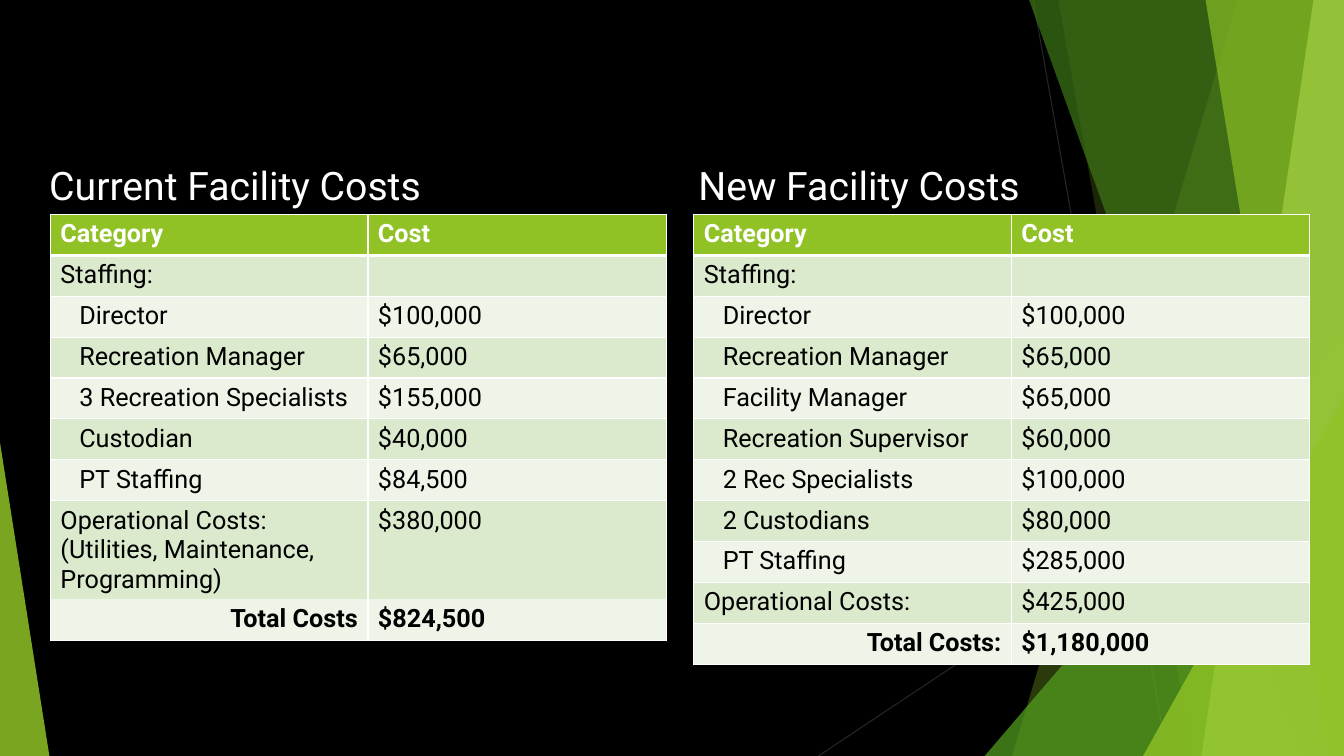
from lxml.etree import SubElement
from pptx import Presentation
from pptx.dml.color import RGBColor
from pptx.enum.shapes import MSO_CONNECTOR, MSO_SHAPE
from pptx.enum.text import PP_ALIGN
from pptx.oxml.ns import qn
from pptx.util import Pt

COLORS = {
    "black": "000000", "white": "FFFFFF", "hairline": "262626",
    "lime": "90C226", "green": "54A021", "forest": "3F7819", "pale": "C0E474",
    "odd_row": "DBE9CD", "even_row": "EEF4E8",
}
WIDTH, HEIGHT = 960, 540
ROW_HEIGHT, TALL_ROW_HEIGHT = 29.2, 70
COLUMN_WIDTHS = (226.8, 213.2)
CELL_MARGIN, STAFF_INDENT = 7.2, 13.5


def color(name):
    return RGBColor.from_string(COLORS[name])


class CostSlide:
    """Draws facets, headings and cost tables on one slide in a shared style."""

    def __init__(self, slide, font_name="Roboto"):
        self.slide = slide
        self.shapes = slide.shapes
        self.font_name = font_name
        slide.background.fill.solid()
        slide.background.fill.fore_color.rgb = color("black")

    def add_text(self, paragraph, text, size, color_name, bold=False):
        run = paragraph.add_run()
        run.text = text
        font_format = {"name": self.font_name, "size": Pt(size), "bold": bold}
        for attribute, value in font_format.items():
            setattr(run.font, attribute, value)
        run.font.color.rgb = color(color_name)

    def hairline(self, *ends):
        connector = self.shapes.add_connector(MSO_CONNECTOR.STRAIGHT, *map(Pt, ends))
        connector.line.color.rgb = color("hairline")
        connector.line.width = Pt(0.75)
        SubElement(connector._element.spPr, qn("a:effectLst"))

    def paint(self, shape, color_name, opacity):
        shape.shadow.inherit = False
        shape.line.fill.background()
        shape.fill.solid()
        shape.fill.fore_color.rgb = color(color_name)
        fill = shape._element.spPr.find(qn("a:solidFill"))
        SubElement(fill[0], qn("a:alpha"), val=str(opacity * 1000))

    def band(self, top_left, bottom_left, color_name, opacity):
        builder = self.shapes.build_freeform(Pt(top_left), 0)
        corners = ((WIDTH, 0), (WIDTH, HEIGHT), (bottom_left, HEIGHT))
        builder.add_line_segments([(Pt(x), Pt(y)) for x, y in corners], close=True)
        self.paint(builder.convert_to_shape(), color_name, opacity)

    def triangle(self, left, top, width, apex, color_name, opacity):
        box = map(Pt, (left, top, width, HEIGHT - top))
        shape = self.shapes.add_shape(MSO_SHAPE.ISOSCELES_TRIANGLE, *box)
        shape.adjustments[0] = apex
        self.paint(shape, color_name, opacity)

    def heading(self, text, left):
        box = self.shapes.add_textbox(Pt(left), Pt(112), Pt(437), Pt(57.6))
        box.text_frame.word_wrap = True
        self.add_text(box.text_frame.paragraphs[0], text, 28, "white")

    def borders(self, cell, top, bottom):
        properties = cell._tc.get_or_add_tcPr()
        for side, width in {"L": 1, "R": 1, "T": top, "B": bottom}.items():
            line = SubElement(properties, qn(f"a:ln{side}"), w=str(Pt(width)))
            if width:
                fill = SubElement(line, qn("a:solidFill"))
                SubElement(fill, qn("a:srgbClr"), val=COLORS["white"])
            else:
                SubElement(line, qn("a:noFill"))

    def cost_table(self, left, staff, operations, total, total_rule, tall=False):
        rows = [("Category", "Cost"), ("Staffing:", ""), *staff, operations, total]
        last = len(rows) - 1
        heights = [ROW_HEIGHT] * len(rows)
        if tall:
            heights[last - 1] = TALL_ROW_HEIGHT
        rules = [1, 3] + [1] * (last - 2) + [total_rule, 1]
        frame = self.shapes.add_table(
            len(rows), 2, Pt(left), Pt(153.2), Pt(sum(COLUMN_WIDTHS)), Pt(sum(heights)))
        table = frame.table
        for column, width in zip(table.columns, COLUMN_WIDTHS):
            column.width = Pt(width)
        for index, texts in enumerate(rows):
            table.rows[index].height = Pt(heights[index])
            header = index == 0
            fill_name = "lime" if header else "odd_row" if index % 2 else "even_row"
            for column, text in enumerate(texts):
                cell = table.cell(index, column)
                self.borders(cell, rules[index], rules[index + 1])
                cell.fill.solid()
                cell.fill.fore_color.rgb = color(fill_name)
                paragraph = cell.text_frame.paragraphs[0]
                if column == 0 and 1 < index < last - 1:
                    cell.margin_left = Pt(CELL_MARGIN + STAFF_INDENT)
                if column == 0 and index == last:
                    paragraph.alignment = PP_ALIGN.RIGHT
                if text:
                    self.add_text(paragraph, text, 18, "white" if header else "black",
                                  header or index == last)


def main():
    presentation = Presentation()
    presentation.slide_width, presentation.slide_height = Pt(WIDTH), Pt(HEIGHT)
    costs = CostSlide(presentation.slides.add_slide(presentation.slide_layouts[6]))

    costs.hairline(738, 0, 833.8, HEIGHT)
    costs.hairline(WIDTH, 290.2, 584.6, HEIGHT)
    costs.band(884.2, 722.9, "lime", 30)
    costs.band(756, 851.8, "lime", 20)
    costs.triangle(703.4, 239.8, 256.6, 1, "green", 72)
    costs.band(735.1, 929.5, "forest", 70)
    costs.band(938.2, 858.2, "pale", 70)
    costs.band(861.1, 949, "lime", 65)
    costs.triangle(816.5, 283, 143.5, 1, "lime", 80)
    costs.triangle(0, 316.1, 35.3, 0, "lime", 85)

    current_staff = [
        ("Director", "$100,000"), ("Recreation Manager", "$65,000"),
        ("3 Recreation Specialists", "$155,000"), ("Custodian", "$40,000"),
        ("PT Staffing", "$84,500"),
    ]
    new_staff = [
        ("Director", "$100,000"), ("Recreation Manager", "$65,000"),
        ("Facility Manager", "$65,000"), ("Recreation Supervisor", "$60,000"),
        ("2 Rec Specialists", "$100,000"), ("2 Custodians", "$80,000"),
        ("PT Staffing", "$285,000"),
    ]
    costs.cost_table(
        36, current_staff,
        ("Operational Costs: (Utilities, Maintenance, Programming)", "$380,000"),
        ("Total Costs", "$824,500"), total_rule=0, tall=True)
    costs.heading("Current Facility Costs", 28.1)
    costs.cost_table(
        495.6, new_staff, ("Operational Costs:", "$425,000"),
        ("Total Costs:", "$1,180,000"), total_rule=1)
    costs.heading("New Facility Costs", 491.8)

    presentation.save("out.pptx")


if __name__ == "__main__":
    main()
